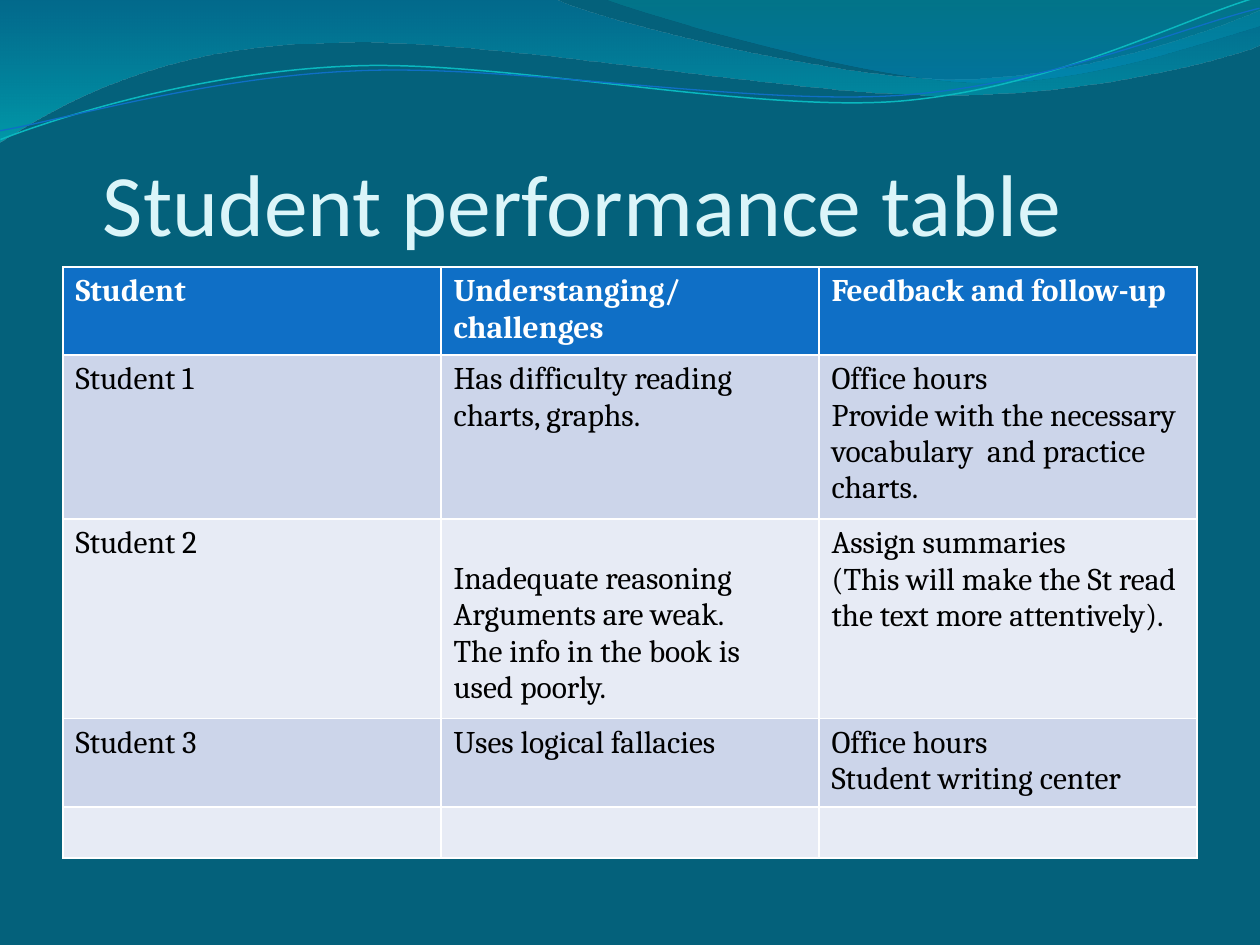
from lxml import etree
from pptx import Presentation
from pptx.dml.color import RGBColor
from pptx.enum.text import MSO_ANCHOR
from pptx.oxml.ns import qn
from pptx.util import Pt

PX = 914400 // 126
BOTTOM = MSO_ANCHOR.BOTTOM
COLORS = {
    "background": "04617B", "title": "DBF5F9", "header": "0F6FC6",
    "odd row": "CCD5EA", "even row": "E7EBF5", "white": "FFFFFF", "black": "000000",
    "deep blue": "0074A1", "cyan": "00C6CF", "teal": "00A1A9", "sea blue": "008BBF",
    "bright teal": "0AB8BF", "blue": "0F6FC6",
}

# Content
TITLE = "Student performance table"
ROWS = [  # the lines of each cell
    [["Student"], ["Understanging/", "challenges"], ["Feedback and follow-up"]],
    [["Student 1"], ["Has difficulty reading charts, graphs."],
     ["Office hours", "Provide with the necessary vocabulary  and practice charts."]],
    [["Student 2"],
     ["Inadequate reasoning", "Arguments are weak.",
      "The info in the book is used poorly."],
     ["Assign summaries", "(This will make the St read the text more attentively)."]],
    [["Student 3"], ["Uses logical fallacies"],
     ["Office hours", "Student writing center"]],
    [[], [], []],
]
ROW_HEIGHT = 51  # rows grow with their text
LOWERED_CELL, LOWERED_TOP = (2, 1), 42  # this cell starts one line down

# Waves: a pair is a straight step, six numbers are a Bezier curve
BANDS = [  # path, gradient stops as (position, colour, opacity %)
    ([(0, 0), (554, -1), (600, 21, 837, 79, 955, 79), (1075, 79, 1207, 33, 1260, 11),
      (1261, 45), (1239, 55, 1096, 96, 940, 95), (784, 95, 481, 35, 324, 43),
      (163, 45, 58, 105, -1, 142)],
     [(0, "deep blue", 45), (1, "cyan", 55)]),
    ([(604, -1), (641, 14, 859, 78, 969, 82), (1079, 87, 1211, 40, 1260, 26), (1260, 0)],
     [(0, "teal", 30), (0.8, "sea blue", 45)]),
]
STRANDS = [  # path before turning, colour, width in points
    ([(-2, 110), (58, 90, 200, 52, 350, 53), (499, 53, 745, 118, 896, 114),
      (1049, 109, 1184, 45, 1260, 27)], "bright teal", 0.85),
    ([(-2, 101), (57, 94, 207, 57, 357, 58), (509, 58, 750, 112, 902, 108),
      (1052, 104, 1188, 52, 1262, 38)], "blue", 0.75),
]
STRAND_ROTATION = 357.3


def rgb(name):
    return RGBColor.from_string(COLORS[name])


def add_wave(slide, path, close):
    """Draw through all points, then join each curve's three steps into one."""
    start, *steps = path
    points = [step[i:i + 2] for step in steps for i in range(0, len(step), 2)]
    builder = slide.shapes.build_freeform(*start, scale=PX)
    builder.add_line_segments(points, close=close)
    wave = builder.convert_to_shape()
    wave.shadow.inherit = False
    lines = iter(list(wave._element.iter(qn("a:lnTo"))))
    for step in steps:
        line = next(lines)
        if len(step) == 6:
            curve = etree.Element(qn("a:cubicBezTo"))
            line.addprevious(curve)
            for part in (line, next(lines), next(lines)):
                curve.append(part[0])
                part.getparent().remove(part)
    return wave


def add_band(slide, path, stops):
    band = add_wave(slide, path, True)
    band.line.fill.background()
    band.fill.gradient()
    band.fill.gradient_angle = 270
    for stop, (position, color, _) in zip(band.fill.gradient_stops, stops):
        stop.position = position
        stop.color.rgb = rgb(color)
    fill_colors = band._element.spPr.find(qn("a:gradFill")).iter(qn("a:srgbClr"))
    for fill_color, (_, _, opacity) in zip(fill_colors, stops):
        etree.SubElement(fill_color, qn("a:alpha"), val=str(opacity * 1000))


def add_strand(slide, path, color, width):
    strand = add_wave(slide, path, False)
    strand.rotation = STRAND_ROTATION
    strand.fill.background()
    strand.line.color.rgb = rgb(color)
    strand.line.width = Pt(width)


def format_text(frame, size, font_name, color, bold=False):
    for paragraph in frame.paragraphs:
        for run in paragraph.runs:
            font = run.font
            font.size, font.name, font.bold = Pt(size), font_name, bold
            font.color.rgb = rgb(color)


def add_title(slide):
    frame = slide.shapes.add_textbox(63 * PX, 97 * PX, 1134 * PX, 157 * PX).text_frame
    frame.word_wrap = True
    frame.vertical_anchor = BOTTOM
    frame.margin_left, frame.margin_right = 40 * PX, 0
    frame.margin_top, frame.margin_bottom = 6 * PX, 0
    frame.text = TITLE
    format_text(frame, 50, "Calibri", "title")


def add_student_table(slide):
    # The default table style draws the white rules
    table_frame = slide.shapes.add_table(
        len(ROWS), 3, 63 * PX, 267 * PX, 1134 * PX, 630 * PX)
    table = table_frame.table
    for r, cells in enumerate(ROWS):
        table.rows[r].height = ROW_HEIGHT * PX
        header = r == 0
        row_color = "header" if header else "odd row" if r % 2 else "even row"
        for c, lines in enumerate(cells):
            cell = table.cell(r, c)
            cell.fill.solid()
            cell.fill.fore_color.rgb = rgb(row_color)
            cell.text_frame.text = "\n".join(lines)
            format_text(cell.text_frame, 18, "Cambria",
                        "white" if header else "black", header)
    table.cell(*LOWERED_CELL).margin_top = LOWERED_TOP * PX
    table_frame.height = 630 * PX


def main():
    deck = Presentation()
    deck.slide_width, deck.slide_height = 1260 * PX, 945 * PX
    slide = deck.slides.add_slide(deck.slide_layouts[6])
    slide.background.fill.solid()
    slide.background.fill.fore_color.rgb = rgb("background")
    for band in BANDS:
        add_band(slide, *band)
    for strand in STRANDS:
        add_strand(slide, *strand)
    add_title(slide)
    add_student_table(slide)
    deck.save("out.pptx")


if __name__ == "__main__":
    main()
